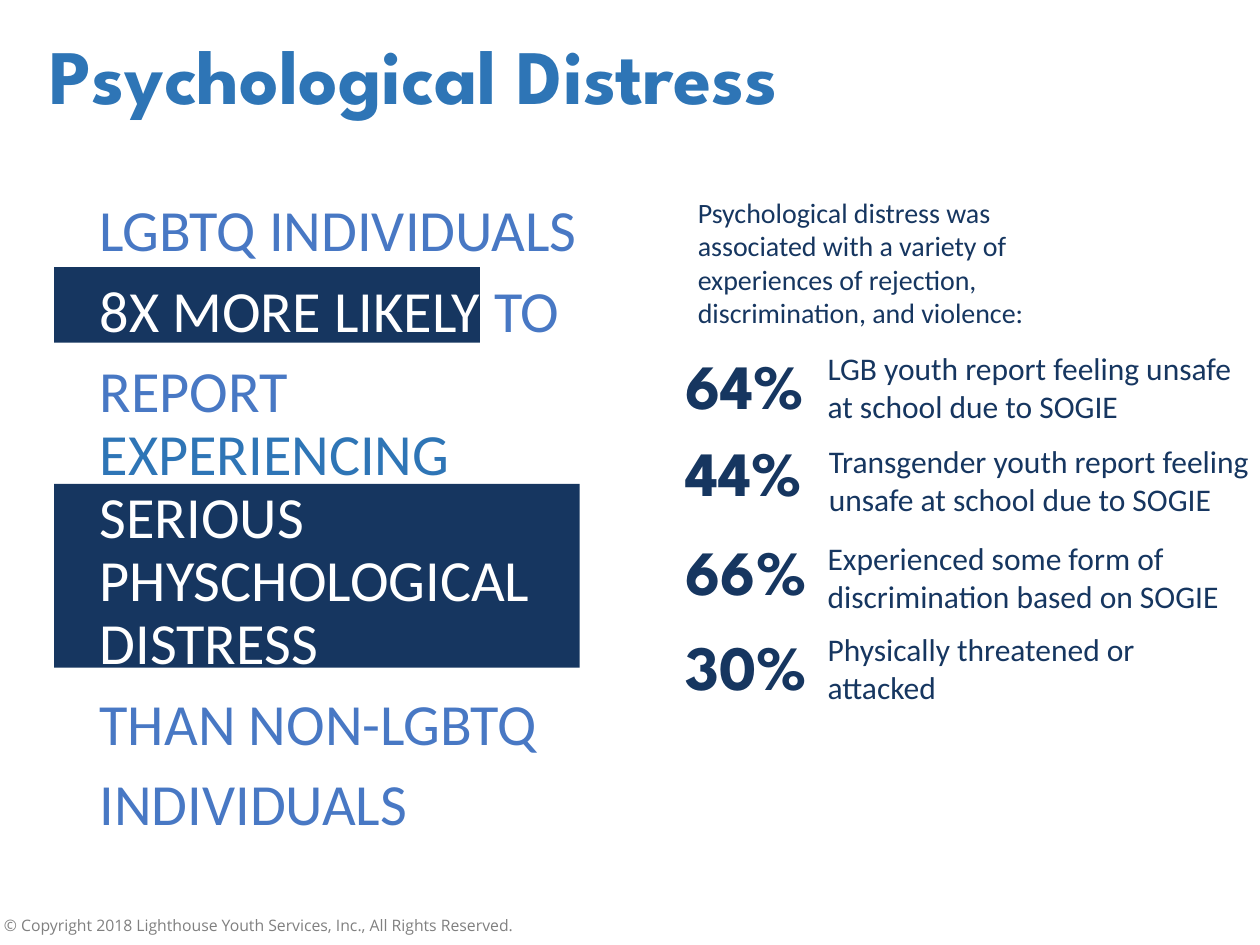
"""Build the Psychological Distress slide."""
from dataclasses import dataclass

from lxml import etree
from pptx import Presentation
from pptx.dml.color import RGBColor
from pptx.enum import shapes, text
from pptx.oxml import ns
from pptx.util import Inches, Pt

NAVY, BLUE, LIGHT, WHITE, GRAY = "163660", "2E75B6", "4878C4", "FFFFFF", "808080"
BODY_FONT, HEAD_FONT, NOTE_FONT = "Calibri", "League Spartan", "Open Sans"


@dataclass
class Style:
    font: str
    size: float
    color: str
    bold: bool = False


@dataclass
class Stat:
    value: str
    value_top: float
    label: str
    label_left: float
    label_top: float


TITLE = Style(HEAD_FONT, 44, BLUE, True)
VALUE = Style(HEAD_FONT, 36, NAVY, True)
LABEL = Style(BODY_FONT, 18, NAVY)
INTRO = Style(BODY_FONT, 16, NAVY)
NOTE = Style(NOTE_FONT, 9, GRAY)

BARS = [(0.43, 2.12, 3.38, 0.6), (0.43, 3.84, 4.17, 1.46)]
MESSAGE = [
    [("LGBTQ INDIVIDUALS", LIGHT)],
    [("8X MORE LIKELY ", WHITE), ("TO", LIGHT)],
    [("REPORT ", LIGHT), ("EXPERIENCING ", BLUE), ("SERIOUS PHYSCHOLOGICAL DISTRESS", WHITE)],
    [("THAN NON-LGBTQ", LIGHT)],
    [("INDIVIDUALS", LIGHT)],
]
STATS = [
    Stat("64%", 2.7, "LGB youth report feeling unsafe\nat school due to SOGIE", 6.47, 2.72),
    Stat("44%", 3.39, "Transgender youth report feeling unsafe at school due to SOGIE", 6.48, 3.46),
    Stat("66%", 4.18, "Experienced some form of discrimination based on SOGIE", 6.47, 4.23),
    Stat("30%", 4.93, "Physically threatened or\nattacked", 6.47, 4.95),
]


def rgb(color: str) -> RGBColor:
    """Turn a hex string into a colour."""
    return RGBColor.from_string(color)


def format_run(r, style: Style) -> None:
    """Apply a style to a run."""
    r.font.name = style.font
    r.font.size = Pt(style.size)
    r.font.bold = style.bold
    r.font.color.rgb = rgb(style.color)


def place(sp, left: float, top: float, width: float, height: float) -> None:
    """Move and size a shape, in inches."""
    sp.left, sp.top = Inches(left), Inches(top)
    sp.width, sp.height = Inches(width), Inches(height)


def set_text(tf, content: str, style: Style, align=text.PP_ALIGN.LEFT) -> None:
    """Fill a text frame with evenly styled paragraphs."""
    tf.text = content
    tf.word_wrap = True
    for p in tf.paragraphs:
        p.alignment = align
        for r in p.runs:
            format_run(r, style)


def add_text(s, box: tuple, content: str, style: Style, align=text.PP_ALIGN.LEFT):
    """Add a wrapping text box and return its frame."""
    tf = s.shapes.add_textbox(*map(Inches, box)).text_frame
    set_text(tf, content, style, align)
    return tf


def add_bar(s, box: tuple) -> None:
    """Add a plain navy highlight bar."""
    sp = s.shapes.add_shape(shapes.MSO_SHAPE.RECTANGLE, *map(Inches, box))
    sp.shadow.inherit = False
    sp.fill.solid()
    sp.fill.fore_color.rgb = rgb(NAVY)
    sp.line.fill.background()


def bring_to_front(sp) -> None:
    """Move a shape above those already on the slide."""
    sp.element.getparent().append(sp.element)


def fill_title(sp) -> None:
    """Place and fill the title placeholder."""
    place(sp, 0.29, 0.24, 7.81, 0.78)
    tf = sp.text_frame
    set_text(tf, "Psychological Distress", TITLE)
    tf.auto_size = text.MSO_AUTO_SIZE.NONE
    tf.vertical_anchor = text.MSO_ANCHOR.MIDDLE
    tf.paragraphs[0].line_spacing = 0.9


def fill_message(sp) -> None:
    """Place and fill the body placeholder with the coloured message."""
    place(sp, 0.69, 1.55, 4.01, 5.2)
    tf = sp.text_frame
    tf.text = "\n".join("" for _ in MESSAGE)
    tf.word_wrap = True
    tf.auto_size = text.MSO_AUTO_SIZE.NONE
    for i, (p, parts) in enumerate(zip(tf.paragraphs, MESSAGE)):
        p.line_spacing = 0.9
        p.space_before = Pt(10 if i else 0)
        props = p._p.get_or_add_pPr()
        props.set("marL", "0")
        props.set("indent", "0")
        etree.SubElement(props, ns.qn("a:buNone"))
        for words, color in parts:
            r = p.add_run()
            r.text = words
            format_run(r, Style(BODY_FONT, 33.3, color))


def add_stat(s, stat: Stat) -> None:
    """Add a percentage and its explanation."""
    tf = add_text(s, (5.44, stat.value_top, 1.36, 0.71), stat.value, VALUE)
    tf.margin_left = 0
    add_text(s, (stat.label_left, stat.label_top, 3.83, 0.71), stat.label, LABEL)


def main() -> None:
    """Build and save the slide."""
    prs = Presentation()
    prs.slide_width, prs.slide_height = Inches(10), Inches(7.5)
    s = prs.slides.add_slide(prs.slide_layouts[1])
    title, body = s.shapes.title, s.placeholders[1]
    add_text(s, (-0.45, 7.22, 5, 0.25),
             "© Copyright 2018 Lighthouse Youth Services, Inc., All Rights Reserved.",
             NOTE, text.PP_ALIGN.CENTER)
    for box in BARS:
        add_bar(s, box)
    for sp, fill in ((title, fill_title), (body, fill_message)):
        fill(sp)
        bring_to_front(sp)
    add_text(s, (5.44, 1.5, 3.47, 1.18),
             "Psychological distress was associated with a variety of experiences "
             "of rejection, discrimination, and violence:", INTRO)
    for stat in STATS:
        add_stat(s, stat)
    prs.save("out.pptx")


if __name__ == "__main__":
    main()
